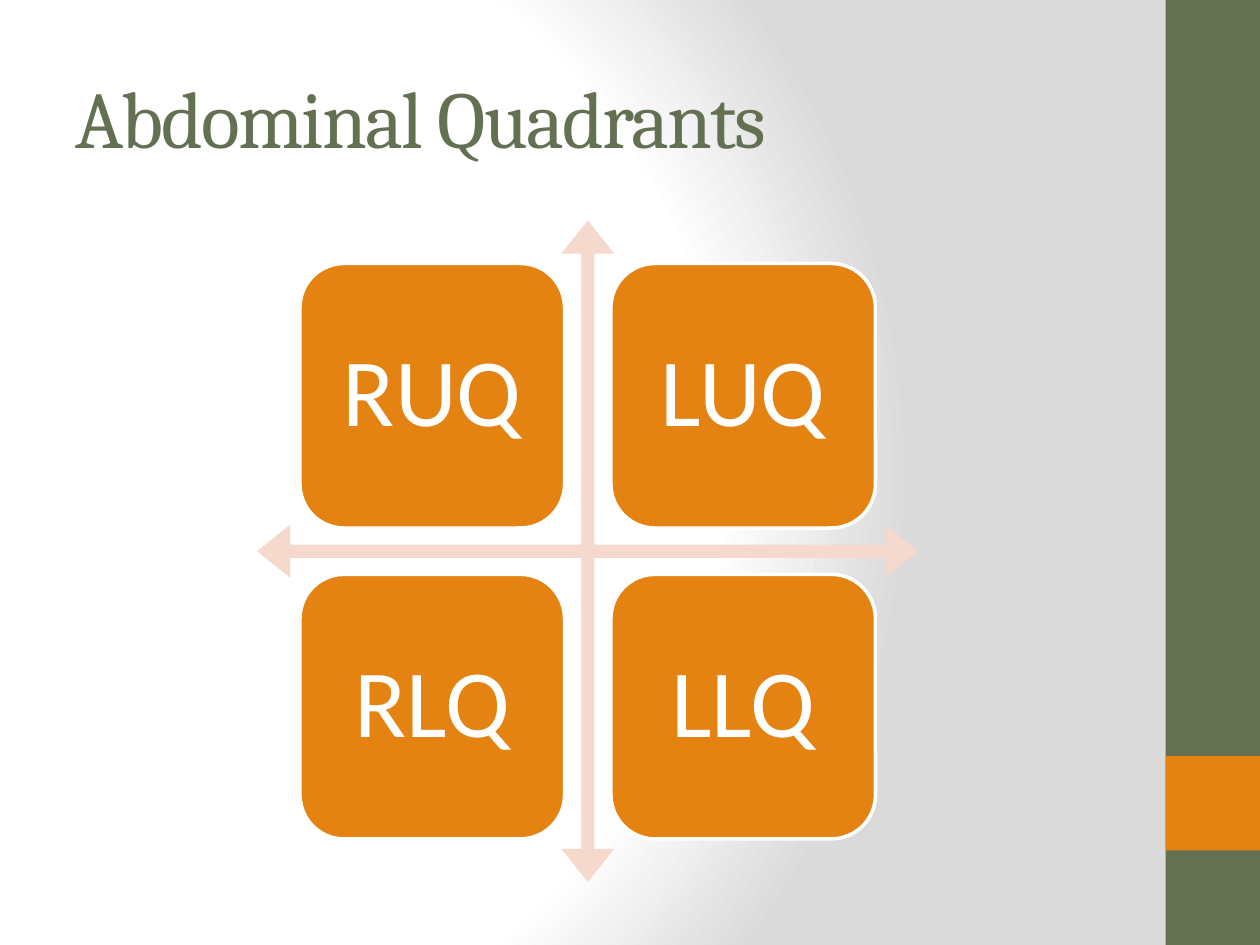
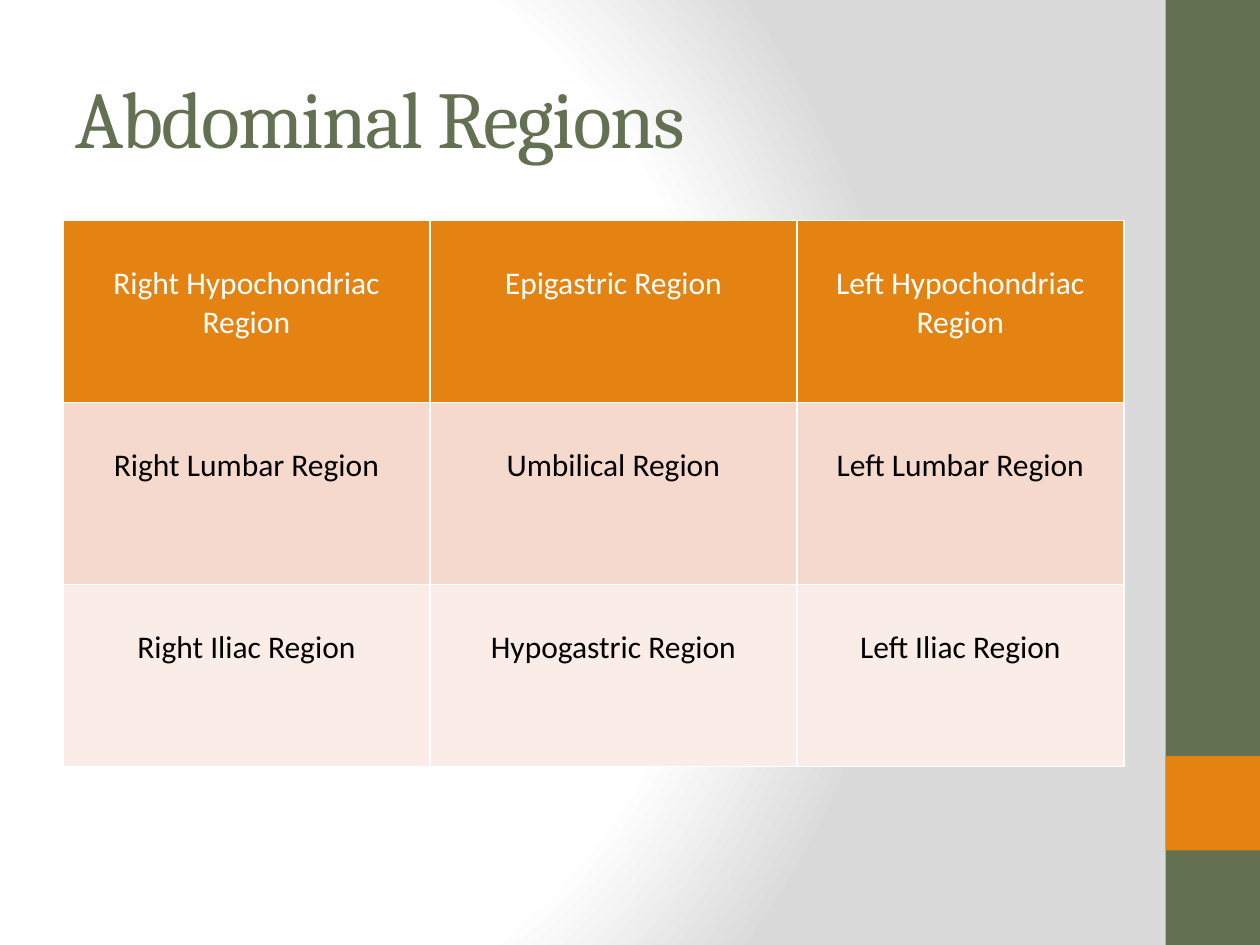
from itertools import product

from pptx import Presentation
from pptx.dml.color import RGBColor
from pptx.enum.shapes import MSO_SHAPE as Shape
from pptx.enum.text import MSO_ANCHOR as Anchor, PP_ALIGN as Align
from pptx.oxml import parse_xml
from pptx.oxml.ns import nsdecls, qn
from pptx.util import Inches, Pt

GREEN = RGBColor(0x63, 0x70, 0x52)
ORANGE = RGBColor(0xE4, 0x83, 0x12)
PEACH = RGBColor(0xF5, 0xD9, 0xCC)
PALE = RGBColor(0xFA, 0xED, 0xE7)
GREY = RGBColor(0xDA, 0xDA, 0xDA)
WHITE = RGBColor(0xFF, 0xFF, 0xFF)
BLACK = RGBColor(0, 0, 0)

COLUMNS, ROWS = 40, 30
BLANK_LAYOUT = 6


class Deck:
    """Holds the style and the current slide; lengths are grid units."""

    title_font, body_font = "Cambria", "Calibri"

    def __init__(self):
        self.presentation = Presentation()
        self.presentation.slide_width = Inches(10)
        self.presentation.slide_height = Inches(7.5)
        self.unit = self.presentation.slide_width / COLUMNS
        self.slide = None
        self.set_background()

    def lengths(self, *units):
        return [round(value * self.unit) for value in units]

    def set_background(self):
        """Give the master a circular gradient from white to grey."""
        master = self.presentation.slide_master
        master.background.fill.solid()
        solid = master.element.find(".//" + qn("p:bgPr")).find(qn("a:solidFill"))
        stops = "".join(
            f'<a:gs pos="{share * 1000}"><a:srgbClr val="{color}"/></a:gs>'
            for share, color in ((0, WHITE), (75, WHITE), (100, GREY)))
        solid.getparent().replace(solid, parse_xml(
            f'<a:gradFill {nsdecls("a")} rotWithShape="1"><a:gsLst>{stops}</a:gsLst>'
            '<a:path path="circle"><a:fillToRect l="20000" t="50000" '
            'r="100000" b="50000"/></a:path></a:gradFill>'))

    def add_slide(self, title):
        layout = self.presentation.slide_layouts[BLANK_LAYOUT]
        self.slide = self.presentation.slides.add_slide(layout)
        self.shape(Shape.RECTANGLE, 37, 0, 3, ROWS, GREEN)
        self.shape(Shape.RECTANGLE, 37, 24, 3, 3, ORANGE)
        self.title(title)

    def set_text(self, frame, text, font, size, color, align=Align.CENTER):
        paragraph = frame.paragraphs[0]
        paragraph.text = text
        paragraph.alignment = align
        paragraph.font.name = font
        paragraph.font.size = Pt(size)
        paragraph.font.bold = False
        paragraph.font.color.rgb = color
        return paragraph

    def title(self, text):
        box = self.slide.shapes.add_textbox(*self.lengths(2, 1.2, 33.32, 5))
        frame = box.text_frame
        frame.word_wrap = True
        frame.vertical_anchor = Anchor.MIDDLE
        paragraph = self.set_text(frame, text, self.title_font, 46, GREEN, Align.LEFT)
        for run in paragraph.runs:
            run._r.get_or_add_rPr().set("spc", "-100")

    def shape(self, kind, left, top, width, height, fill, line=None):
        shape = self.slide.shapes.add_shape(
            kind, *self.lengths(left, top, width, height))
        shape.shadow.inherit = False
        shape.fill.solid()
        shape.fill.fore_color.rgb = fill
        if line is None:
            shape.line.fill.background()
        else:
            shape.line.color.rgb = line
            shape.line.width = Pt(2)
        return shape

    def tile(self, text, left, top, side):
        tile = self.shape(Shape.ROUNDED_RECTANGLE, left, top, side, side, ORANGE, WHITE)
        tile.text_frame.word_wrap = False
        tile.text_frame.vertical_anchor = Anchor.MIDDLE
        paragraph = self.set_text(tile.text_frame, text, self.body_font, 55, WHITE)
        paragraph.line_spacing = 0.9

    def quadrants(self, names, left, top, size):
        """Draw a four-way arrow with one tile in each corner."""
        arrow = self.shape(Shape.QUAD_ARROW, left, top, size, size, PEACH)
        for index, share in enumerate((0.02, 0.04, 0.05)):
            arrow.adjustments[index] = share
        margin, step, side = 0.065 * size, 0.47 * size, 0.4 * size
        for name, (row, column) in zip(names, product(range(2), repeat=2)):
            self.tile(name, left + margin + column * step,
                      top + margin + row * step, side)

    def table(self, rows, row_styles, left, top, widths, row_height):
        frame = self.slide.shapes.add_table(
            len(rows), len(widths),
            *self.lengths(left, top, sum(widths), row_height * len(rows)))
        table = frame.table
        for column, width in zip(table.columns, self.lengths(*widths)):
            column.width = width
        for row, texts, (fill, color) in zip(table.rows, rows, row_styles):
            row.height, = self.lengths(row_height)
            for cell, text in zip(row.cells, texts):
                cell.margin_top = Inches(0.35)
                self.set_text(cell.text_frame, text, self.body_font, 18, color)
                self.borders(cell)
                cell.fill.solid()
                cell.fill.fore_color.rgb = fill

    def borders(self, cell):
        properties = cell._tc.get_or_add_tcPr()
        for side in "LRTB":
            properties.append(parse_xml(
                f'<a:ln{side} {nsdecls("a")} w="{Pt(1)}"><a:solidFill>'
                f'<a:srgbClr val="{WHITE}"/></a:solidFill></a:ln{side}>'))


def main():
    deck = Deck()

    deck.add_slide("Abdominal Quadrants")
    deck.quadrants(("RUQ", "LUQ", "RLQ", "LLQ"), left=8.16, top=7, size=21)

    deck.add_slide("Abdominal Regions")
    regions = (
        ("Right Hypochondriac Region", "Epigastric Region", "Left Hypochondriac Region"),
        ("Right Lumbar Region", "Umbilical Region", "Left Lumbar Region"),
        ("Right Iliac Region", "Hypogastric Region", "Left Iliac Region"),
    )
    row_styles = ((ORANGE, WHITE), (PEACH, BLACK), (PALE, BLACK))
    deck.table(regions, row_styles, left=2, top=7,
               widths=(11.65, 11.65, 10.38), row_height=5.78)

    deck.presentation.save("out.pptx")


if __name__ == "__main__":
    main()
